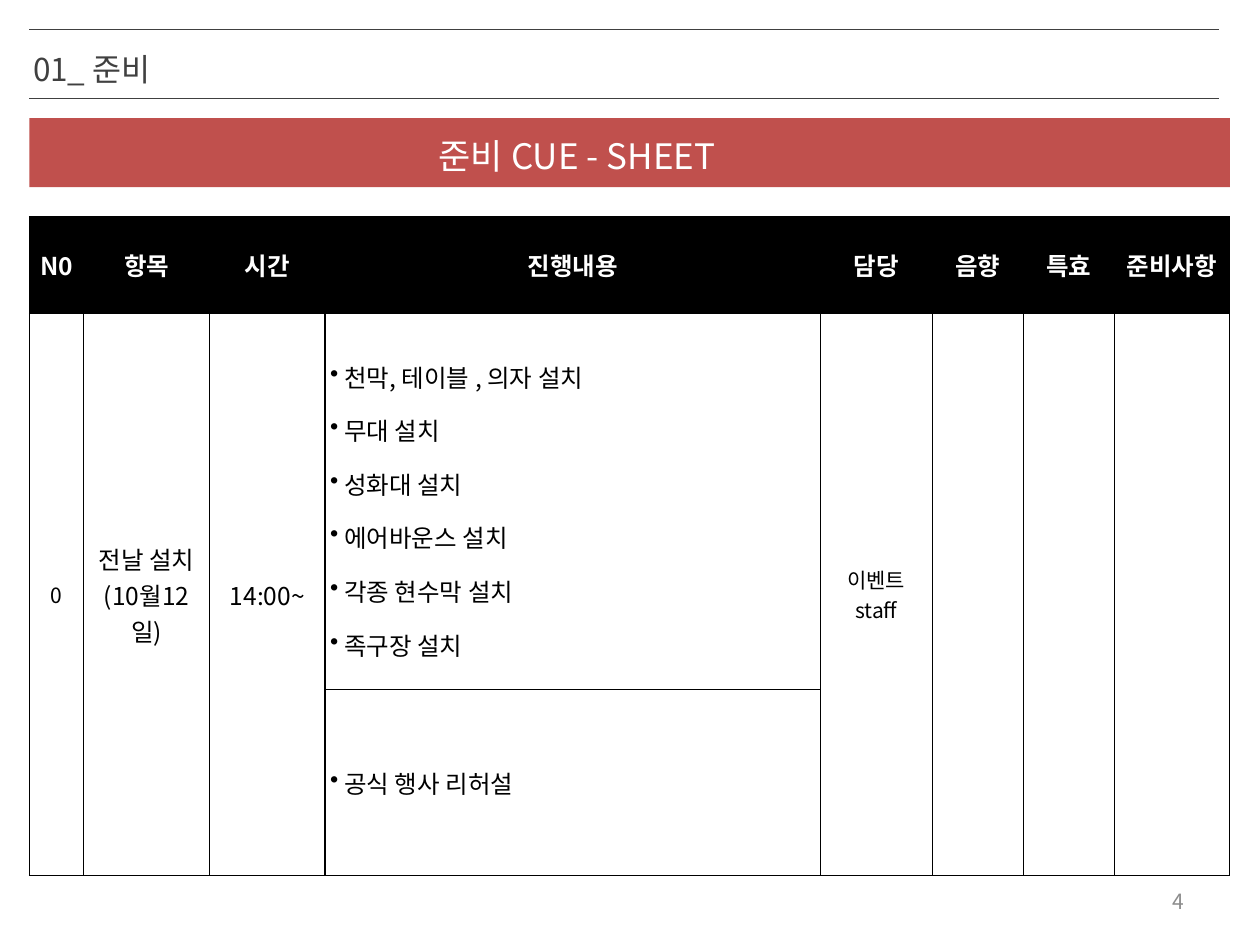
import pptx
import pptx.dml.color
import pptx.enum.shapes
import pptx.enum.text
import pptx.oxml
import pptx.oxml.ns
import pptx.util

Pt = pptx.util.Pt
ALIGN = pptx.enum.text.PP_ALIGN
ANCHOR = pptx.enum.text.MSO_ANCHOR
qn = pptx.oxml.ns.qn
FONT = "Noto Sans CJK KR"
COLORS = {"ink": "000000", "rule": "404040", "banner": "C0504D",
          "paper": "FFFFFF", "muted": "8C8C8C"}

COL_WIDTHS = [31, 72, 66, 283, 64, 52, 52, 66]
ROW_HEIGHTS = [55.5, 214.5, 106.5]
HEADERS = ["N0", "항목", "시간", "진행내용", "담당", "음향", "특효", "준비사항"]
TASK_COL = 3
TASKS = ["천막, 테이블 , 의자 설치", "무대 설치", "성화대 설치",
         "에어바운스 설치", "각종 현수막 설치", "족구장 설치"]
# Column: (text, size) for cells that span both body rows
MERGED = {0: ("0", 12), 1: ("전날 설치\n(10월12일)", 14), 2: ("14:00~", 14),
          4: ("이벤트 staff", 12), 5: ("", 12), 6: ("", 12), 7: ("", 12)}


def rgb(name):
    return pptx.dml.color.RGBColor.from_string(COLORS[name])


def put_text(tf, text, size=14, color="ink", bold=False, align=ALIGN.LEFT,
             spacing=None, bullet=False):
    tf.word_wrap = True
    for i, line in enumerate(text.split("\n")):
        p = tf.add_paragraph() if i else tf.paragraphs[0]
        p.alignment = align
        if spacing:
            p.line_spacing = spacing
        if bullet:
            pPr = p._p.get_or_add_pPr()
            pPr.set("marL", str(Pt(8)))
            pPr.set("indent", str(-Pt(8)))
            pPr.append(pptx.oxml.parse_xml(
                f'<a:buChar {pptx.oxml.ns.nsdecls("a")} char="•"/>'))
        if not line:
            continue
        r = p.add_run()
        r.text = line
        r.font.size, r.font.bold, r.font.name = Pt(size), bold, FONT
        r.font.color.rgb = rgb(color)
        r._r.get_or_add_rPr().append(pptx.oxml.parse_xml(
            f'<a:ea {pptx.oxml.ns.nsdecls("a")} typeface="{FONT}"/>'))


def add_text(slide, x, y, w, h, text, anchor=ANCHOR.TOP, **fmt):
    tf = slide.shapes.add_textbox(Pt(x), Pt(y), Pt(w), Pt(h)).text_frame
    tf.vertical_anchor = anchor
    put_text(tf, text, **fmt)


def add_rule(slide, x, y, w):
    line = slide.shapes.add_connector(
        pptx.enum.shapes.MSO_CONNECTOR.STRAIGHT, Pt(x), Pt(y), Pt(x + w), Pt(y))
    line.line.color.rgb = rgb("rule")
    line.line.width = Pt(0.25)
    line._element.spPr.append(pptx.oxml.parse_xml(
        f'<a:effectLst {pptx.oxml.ns.nsdecls("a")}/>'))


def add_heading(slide, x, y, w, h):
    for rule_y in (y, y + h):
        add_rule(slide, x, rule_y, w)
    add_text(slide, x - 5, y + 11.5, 516, 26, "01_ 준비",
             size=18, color="rule", spacing=0.85)


def add_banner(slide, x, y, w, h):
    sp = slide.shapes.add_shape(
        pptx.enum.shapes.MSO_SHAPE.RECTANGLE, Pt(x), Pt(y), Pt(w), Pt(h))
    sp.shadow.inherit = False
    sp.fill.solid()
    sp.fill.fore_color.rgb = rgb("banner")
    sp.line.fill.background()
    add_text(slide, x + 203, y + 6, 220, 32, "준비 CUE - SHEET",
             size=20, color="paper", align=ALIGN.CENTER)


def set_borders(cell, left, right, top, bottom):
    tcPr = cell._tc.get_or_add_tcPr()
    sides = zip("LRTB", (left, right, top, bottom))
    for i, (side, width) in enumerate(sides):
        tcPr.insert(i, pptx.oxml.parse_xml(
            f'<a:ln{side} {pptx.oxml.ns.nsdecls("a")} w="{Pt(width)}">'
            f'<a:solidFill><a:srgbClr val="{COLORS["ink"]}"/></a:solidFill>'
            f'</a:ln{side}>'))


def add_cue_table(slide, x, y, w, h):
    last = len(COL_WIDTHS) - 1
    table = slide.shapes.add_table(len(ROW_HEIGHTS), last + 1,
                                   Pt(x), Pt(y), Pt(w), Pt(h)).table
    for col, width in zip(table.columns, COL_WIDTHS):
        col.width = Pt(width)
    for row, height in zip(table.rows, ROW_HEIGHTS):
        row.height = Pt(height)

    # Fill, insets and borders
    for r in range(len(ROW_HEIGHTS)):
        for c in range(last + 1):
            cell = table.cell(r, c)
            cell.fill.solid()
            cell.fill.fore_color.rgb = rgb("paper" if r else "ink")
            cell.vertical_anchor = ANCHOR.MIDDLE
            cell.margin_left = cell.margin_right = Pt(2.9)
            cell.margin_top = cell.margin_bottom = Pt(3.6)
            set_borders(cell, 1 if c else 0.75, 1 if c < last else 0.75,
                        0.75, 0.75)

    # Header row
    for c, label in enumerate(HEADERS):
        put_text(table.cell(0, c).text_frame, label, color="paper",
                 bold=True, align=ALIGN.CENTER)

    # Body cells
    for c, (text, size) in MERGED.items():
        table.cell(1, c).merge(table.cell(2, c))
        put_text(table.cell(1, c).text_frame, text, size=size,
                 align=ALIGN.CENTER)
    put_text(table.cell(1, TASK_COL).text_frame, "\n".join(TASKS),
             spacing=1.5, bullet=True)
    put_text(table.cell(2, TASK_COL).text_frame, "공식 행사 리허설", bullet=True)


def add_page_number(slide, x, y, w, h):
    add_text(slide, x, y, w, h, "4", anchor=ANCHOR.MIDDLE, size=12,
             color="muted", align=ALIGN.RIGHT)


def main():
    prs = pptx.Presentation()
    prs.slide_width, prs.slide_height = Pt(720), Pt(540)
    slide = prs.slides.add_slide(prs.slide_layouts[6])
    left, width = 16.8, sum(COL_WIDTHS)
    add_banner(slide, left, 67.5, width, 39.5)
    add_heading(slide, left, 16.8, 680, 39.4)
    add_cue_table(slide, left, 123.8, width, sum(ROW_HEIGHTS))
    add_page_number(slide, 516, 500.5, 168, 28.8)
    prs.save("out.pptx")


if __name__ == "__main__":
    main()
